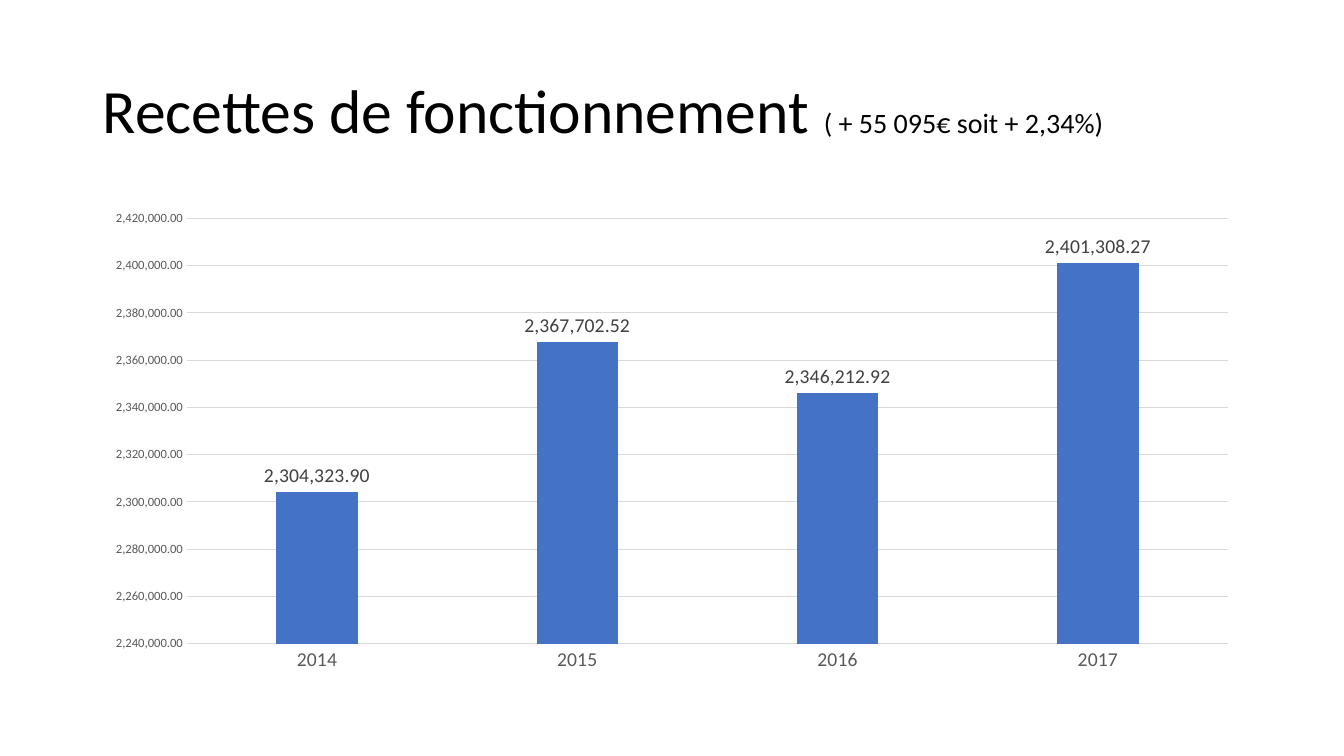
from pptx import Presentation
from pptx.chart.data import CategoryChartData
from pptx.dml.color import RGBColor
from pptx.enum.chart import XL_CHART_TYPE, XL_LABEL_POSITION, XL_TICK_MARK
from pptx.enum.text import MSO_ANCHOR, MSO_AUTO_SIZE, PP_ALIGN
from pptx.util import Inches, Pt

BLACK = RGBColor(0x00, 0x00, 0x00)
BLUE = RGBColor(0x44, 0x72, 0xC4)
AXIS_GREY = RGBColor(0x59, 0x59, 0x59)
LABEL_GREY = RGBColor(0x40, 0x40, 0x40)
GRID_GREY = RGBColor(0xD9, 0xD9, 0xD9)
FONT = "Calibri"
AMOUNT_FORMAT = "#,##0.00"
SLIDE_WIDTH, SLIDE_HEIGHT = Inches(13.33), Inches(7.5)
MARGIN = Inches(0.92)
CONTENT_WIDTH = SLIDE_WIDTH - 2 * MARGIN

RECEIPTS = {
    "2014": 2304323.90,
    "2015": 2367702.52,
    "2016": 2346212.92,
    "2017": 2401308.27,
}


def style_font(font, size, color):
    """Set the typeface, point size and colour of a font."""
    font.name = FONT
    font.size = Pt(size)
    font.bold = False
    font.color.rgb = color


def style_line(line):
    """Draw a thin light grey line."""
    line.color.rgb = GRID_GREY
    line.width = Pt(0.75)


def add_heading(slide, left, top, width, height):
    """Fill the title with the heading and its smaller variation note."""
    title = slide.shapes.title
    title.left, title.top, title.width, title.height = left, top, width, height
    frame = title.text_frame
    frame.text = "Recettes de fonctionnement "
    frame.word_wrap = True
    frame.auto_size = MSO_AUTO_SIZE.NONE
    frame.vertical_anchor = MSO_ANCHOR.MIDDLE
    heading = frame.paragraphs[0]
    heading.alignment = PP_ALIGN.LEFT
    heading.line_spacing = 0.9
    variation = heading.add_run()
    variation.text = "( + 55 095€ soit + 2,34%)"
    for run, size in zip(heading.runs, (44, 20)):
        style_font(run.font, size, BLACK)


def add_receipts_chart(slide, left, top, width, height):
    """Place the column chart of yearly receipts in the given box."""
    receipts = CategoryChartData(number_format=AMOUNT_FORMAT)
    receipts.categories = list(RECEIPTS)
    receipts.add_series("Series 1", list(RECEIPTS.values()))
    chart = slide.shapes.add_chart(
        XL_CHART_TYPE.COLUMN_CLUSTERED, left, top, width, height, receipts
    ).chart
    chart.has_legend = False
    chart.has_title = False
    style_font(chart.font, 10, BLACK)

    years, amounts = chart.category_axis, chart.value_axis
    for axis, size in ((years, 14), (amounts, 9)):
        axis.major_tick_mark = XL_TICK_MARK.NONE
        axis.minor_tick_mark = XL_TICK_MARK.NONE
        style_font(axis.tick_labels.font, size, AXIS_GREY)
    style_line(years.format.line)
    amounts.format.line.fill.background()
    amounts.minimum_scale, amounts.maximum_scale = 2240000, 2420000
    amounts.major_unit = 20000
    amounts.tick_labels.number_format = AMOUNT_FORMAT
    amounts.tick_labels.number_format_is_linked = False
    style_line(amounts.major_gridlines.format.line)

    columns = chart.plots[0]
    columns.gap_width = 219
    columns.overlap = -27
    columns.vary_by_categories = False
    series = columns.series[0]
    series.invert_if_negative = False
    series.format.fill.solid()
    series.format.fill.fore_color.rgb = BLUE
    labels = series.data_labels
    labels.show_value = True
    labels.number_format = AMOUNT_FORMAT
    labels.number_format_is_linked = False
    labels.position = XL_LABEL_POSITION.OUTSIDE_END
    style_font(labels.font, 14, LABEL_GREY)


def main():
    """Build and save the receipts slide."""
    deck = Presentation()
    deck.slide_width, deck.slide_height = SLIDE_WIDTH, SLIDE_HEIGHT
    slide = deck.slides.add_slide(deck.slide_layouts[5])
    add_heading(slide, MARGIN, Inches(0.4), CONTENT_WIDTH, Inches(1.45))
    add_receipts_chart(slide, MARGIN, Inches(2), CONTENT_WIDTH, Inches(4.76))
    deck.save("out.pptx")


if __name__ == "__main__":
    main()
